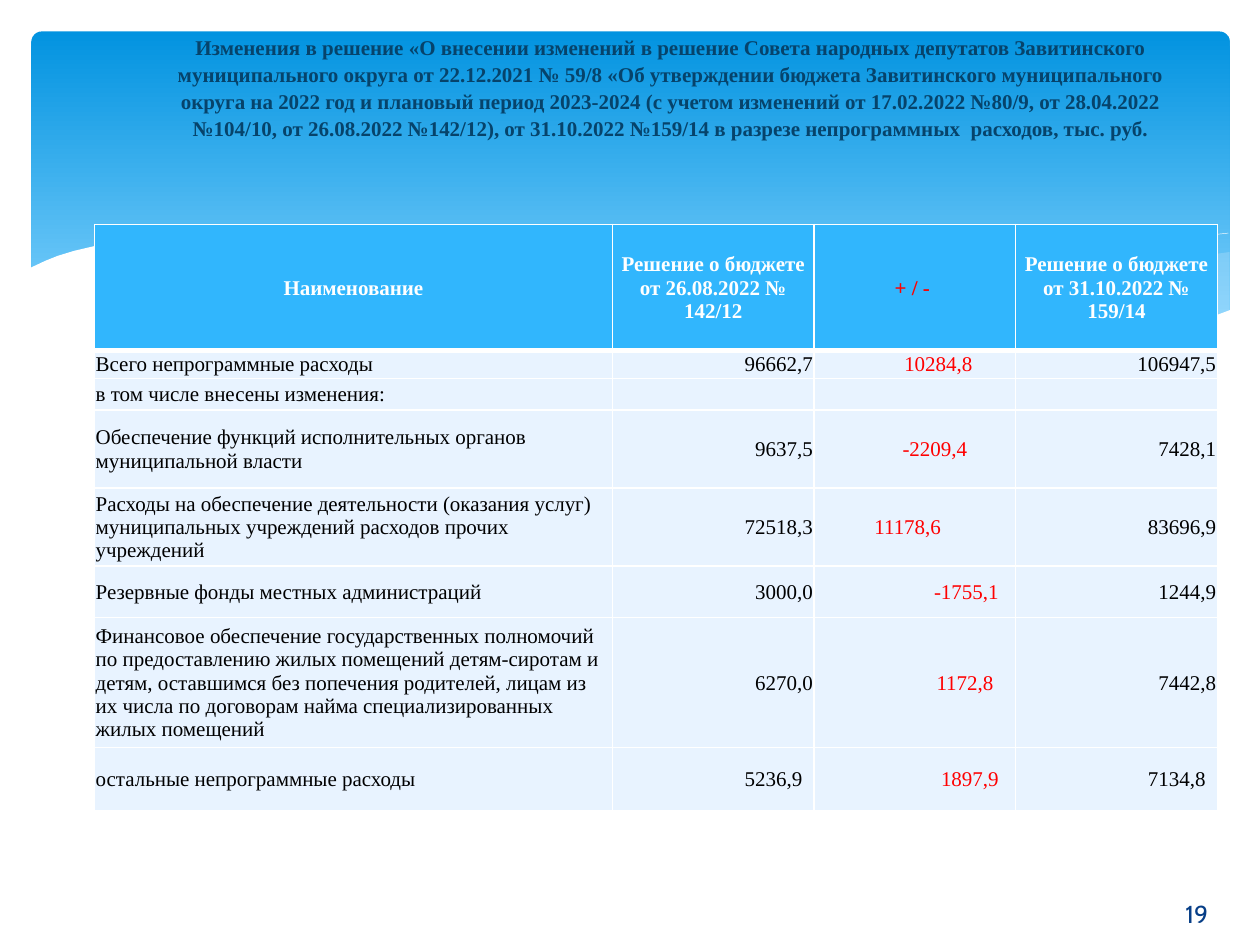
"""Build the slide on changes to the non-programme part of the district budget."""
import lxml.etree
import pptx
import pptx.dml.color
import pptx.enum.shapes
import pptx.enum.text
import pptx.oxml.ns
import pptx.util

Pt = pptx.util.Pt
qn = pptx.oxml.ns.qn
RGB = pptx.dml.color.RGBColor.from_string
ALIGN = pptx.enum.text.PP_ALIGN
ANCHOR = pptx.enum.text.MSO_ANCHOR

THEME = {
    "band_top": "0293E0", "band_bottom": "83D3FE", "wave": "C6E7FC", "white": "FFFFFF",
    "title": "06436B", "number": "073E87", "header": "31B6FD", "body": "E8F3FF",
    "text": "000000", "change": "FF0000",
    "serif": "Times New Roman", "sans": "Cabin", "text_size": 12, "number_size": 14,
}

TITLE = (
    "Изменения в решение «О внесении изменений в решение Совета народных депутатов "
    "Завитинского муниципального округа от 22.12.2021 № 59/8 «Об утверждении бюджета "
    "Завитинского муниципального округа на 2022 год и плановый период 2023-2024 "
    "(с учетом изменений от 17.02.2022 №80/9, от 28.04.2022 №104/10, от 26.08.2022 "
    "№142/12), от 31.10.2022 №159/14 в разрезе непрограммных  расходов, тыс. руб."
)
PAGE = "19"
BUDGET = [
    ("Наименование", "Решение о бюджете от 26.08.2022 № 142/12", "+ / -",
     "Решение о бюджете от 31.10.2022 № 159/14"),
    ("Всего непрограммные расходы", "96662,7", "10284,8", "106947,5"),
    ("в том числе внесены изменения:", "", "", ""),
    ("Обеспечение функций исполнительных органов муниципальной власти",
     "9637,5", "-2209,4", "7428,1"),
    ("Расходы на обеспечение деятельности (оказания услуг) муниципальных учреждений "
     "расходов прочих учреждений", "72518,3", "11178,6", "83696,9"),
    ("Резервные фонды местных администраций", "3000,0", "-1755,1", "1244,9"),
    ("Финансовое обеспечение государственных полномочий по предоставлению жилых помещений "
     "детям-сиротам и детям, оставшимся без попечения родителей, лицам из их числа по "
     "договорам найма специализированных жилых помещений", "6270,0", "1172,8", "7442,8"),
    ("остальные непрограммные расходы", "5236,9", "1897,9", "7134,8"),
]
COLUMN_WIDTHS = [296, 115.2, 115.2, 115.2]
ROW_HEIGHTS = [72, 16, 18, 44.6, 44.6, 29.5, 74.2, 36]
RIGHT_INSETS = {(0, 2): 3, (1, 2): 24, (3, 2): 27, (4, 2): 42, (5, 2): 9, (6, 2): 12,
                (7, 1): 6, (7, 2): 9, (7, 3): 6}
CHANGE_COLUMN = 2

WAVES = [
    {"fill": "wave", "opacity": 29, "knots": [
        (702.7, 144), (682, 147), (652, 153), (620, 160.5), (580, 170.6), (542, 178.6),
        (508, 185), (476, 191), (508, 195), (545, 198.7), (578, 200), (608, 199.4),
        (634, 197), (658, 192), (678, 187), (693, 181.4), (702.7, 178)]},
    {"fill": "wave", "opacity": 40, "knots": [
        (643, 196.6), (603, 190.8), (558, 183), (508, 172.8), (453, 160), (420, 151.9),
        (390, 146), (361, 141), (335, 137.5), (302, 134), (274, 133.2), (248, 133.9),
        (225, 136), (206, 137.5), (232, 141), (261, 146), (291, 152), (323, 160),
        (382, 173), (433, 183.6), (479, 191.5), (520, 197), (556, 199.5), (589, 200),
        (617, 199.4)]},
    {"line": "white", "knots": [
        (222.5, 140.4), (236, 138.2), (261, 136), (289, 134.6), (324, 135.4), (367, 138.2),
        (419, 144), (458, 150), (500, 158), (547, 168), (598, 181), (653, 196)]},
    {"line": "white", "knots": [
        (441.5, 185), (484, 173.5), (538, 160.5), (602, 147), (655, 138), (702, 133.2)]},
    {"fill": "white", "opacity": 100, "knots": [
        (703.4, 177), (690, 182), (670, 188.6), (647, 193.7), (621, 197.3), (592, 199.4),
        (560, 198.7), (523, 195.8), (481, 190.8), (434, 183), (381, 172), (322, 158.4),
        (281, 149), (245, 142), (210, 137), (180, 134), (152, 132.5), (127, 132.5),
        (105, 133.2), (86, 135), (68, 137.5), (55, 140.4), (42.5, 143.3), (33, 146.2),
        (26, 149), (16.6, 153.4), (16.6, 236.9), (703.4, 236.9)]},
]


def apply(target, values):
    for name, value in values.items():
        setattr(target, name, value)


def place(shape, left, top, width, height):
    apply(shape, {"left": Pt(left), "top": Pt(top), "width": Pt(width), "height": Pt(height)})


def write(frame, text, colour, align, bold=False, font="serif", size="text_size", **spacing):
    paragraph = frame.paragraphs[0]
    apply(paragraph, {"alignment": align, **spacing})
    if text:
        run = paragraph.add_run()
        run.text = text
        apply(run.font, {"name": THEME[font], "size": Pt(THEME[size]), "bold": bold})
        run.font.color.rgb = RGB(THEME[colour])
    lxml.etree.SubElement(paragraph._p, qn("a:endParaRPr"), sz=str(THEME[size] * 100))


def add_band(slide):
    band = slide.shapes.add_shape(
        pptx.enum.shapes.MSO_SHAPE.ROUNDED_RECTANGLE, Pt(18), Pt(18), Pt(684.7), Pt(194.4))
    band.adjustments[0] = 0.03
    band.shadow.inherit = False
    band.line.fill.background()
    band.fill.gradient()
    band.fill.gradient_angle = 270
    stops = [("band_top", 0), ("band_bottom", 0.9)]
    for stop, (colour, position) in zip(band.fill.gradient_stops, stops):
        stop.color.rgb = RGB(THEME[colour])
        stop.position = position


def add_wave(slide, wave):
    start, *rest = [(Pt(x), Pt(y)) for x, y in wave["knots"]]
    builder = slide.shapes.build_freeform(*start)
    builder.add_line_segments(rest, close="fill" in wave)
    shape = builder.convert_to_shape()
    shape.shadow.inherit = False
    if "fill" in wave:
        shape.line.fill.background()
        shape.fill.solid()
        shape.fill.fore_color.rgb = RGB(THEME[wave["fill"]])
        colour = shape._element.spPr.find(qn("a:solidFill"))[0]
        lxml.etree.SubElement(colour, qn("a:alpha"), val=str(wave["opacity"] * 1000))
    else:
        shape.fill.background()
        shape.line.color.rgb = RGB(THEME[wave["line"]])
        shape.line.width = Pt(0.25)


def add_borders(cell, widths):
    properties = cell._tc.get_or_add_tcPr()
    for side, width in widths.items():
        border = lxml.etree.SubElement(properties, qn(f"a:ln{side}"), w=str(Pt(width)))
        fill = lxml.etree.SubElement(border, qn("a:solidFill"))
        lxml.etree.SubElement(fill, qn("a:srgbClr"), val=THEME["white"])


def add_budget(slide):
    budget = slide.shapes.add_table(
        len(BUDGET), len(COLUMN_WIDTHS), Pt(54), Pt(128.2),
        Pt(sum(COLUMN_WIDTHS)), Pt(sum(ROW_HEIGHTS))).table
    for column, width in zip(budget.columns, COLUMN_WIDTHS):
        column.width = Pt(width)
    for r, (texts, height) in enumerate(zip(BUDGET, ROW_HEIGHTS)):
        budget.rows[r].height = Pt(height)
        header = r == 0
        for c, text in enumerate(texts):
            cell = budget.cell(r, c)
            apply(cell, {
                "vertical_anchor": ANCHOR.MIDDLE, "margin_left": Pt(0.7),
                "margin_right": Pt(0.7 + RIGHT_INSETS.get((r, c), 0)),
                "margin_top": Pt(0.7), "margin_bottom": 0})
            add_borders(cell, {"L": 1, "R": 1, "T": 3 if r == 1 else 1, "B": 3 if header else 1})
            cell.fill.solid()
            cell.fill.fore_color.rgb = RGB(THEME["header" if header else "body"])
            plain = "white" if header else "text"
            align = ALIGN.CENTER if header else ALIGN.RIGHT if c else ALIGN.LEFT
            write(cell.text_frame, text, "change" if c == CHANGE_COLUMN else plain, align, header)


def main():
    deck = pptx.Presentation()
    apply(deck, {"slide_width": Pt(720), "slide_height": Pt(540)})
    slide = deck.slides.add_slide(deck.slide_layouts[5])
    add_band(slide)
    for wave in WAVES:
        add_wave(slide, wave)

    title = slide.shapes.title
    slide.shapes._spTree.append(title._element)
    place(title, 82.8, 15.1, 601.2, 65.5)
    apply(title.text_frame, {"vertical_anchor": ANCHOR.TOP, "word_wrap": True,
                             "auto_size": pptx.enum.text.MSO_AUTO_SIZE.NONE})
    write(title.text_frame, TITLE, "title", ALIGN.CENTER, True, line_spacing=1.07)

    number = slide.shapes.add_textbox(Pt(650), Pt(496), Pt(67.7), Pt(52.6))
    apply(number.text_frame, {"vertical_anchor": ANCHOR.MIDDLE, "word_wrap": True})
    write(number.text_frame, PAGE, "number", ALIGN.CENTER, font="sans", size="number_size")

    add_budget(slide)
    deck.save("out.pptx")


if __name__ == "__main__":
    main()
